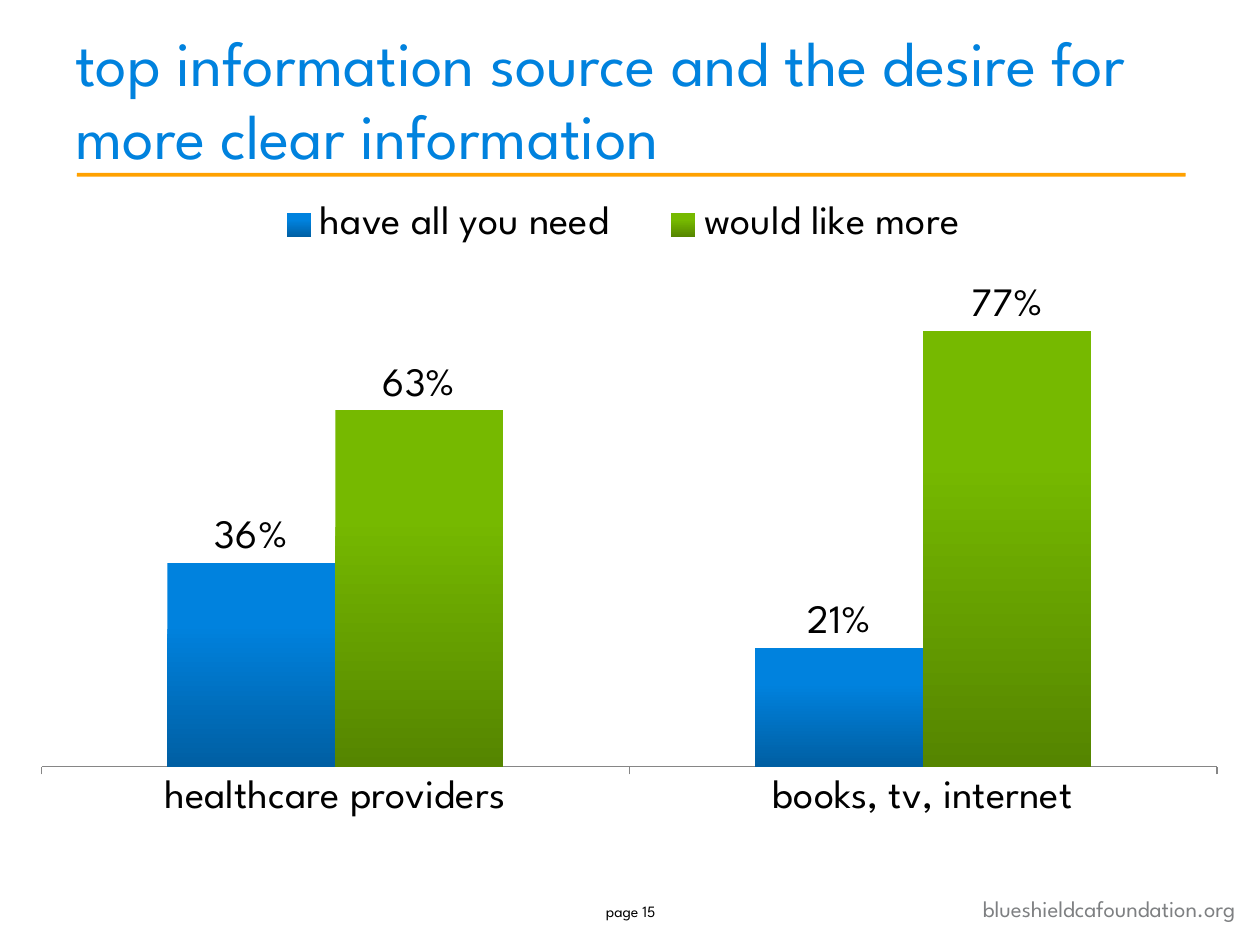
from dataclasses import dataclass

from lxml import etree
from pptx import Presentation
from pptx import util as u
from pptx.chart.data import CategoryChartData
from pptx.dml.color import RGBColor
from pptx.enum import chart as ch, shapes, text
from pptx.oxml import ns


@dataclass(frozen=True)
class Theme:
    face: str = "League Spartan"
    blue: str = "0082DE"
    blue_dark: str = "005FA3"
    green: str = "76B900"
    green_dark: str = "558500"
    orange: str = "FFA100"
    grey: str = "7E8082"
    axis: str = "868686"
    black: str = "000000"
    title_size: int = 36
    title_leading: int = 42
    chart_size: int = 23
    address_size: int = 13
    page_size: int = 9


def colour(code):
    return RGBColor.from_string(code)


def style_font(font, face, size, code):
    font.name, font.size = face, u.Pt(size)
    font.color.rgb = colour(code)


def write(box, words, *, face, size, code, align=text.PP_ALIGN.LEFT,
          anchor=text.MSO_ANCHOR.TOP, leading=None):
    frame = box.text_frame
    frame.word_wrap = True
    frame.vertical_anchor = anchor
    para = frame.paragraphs[0]
    para.alignment = align
    if leading:
        para.line_spacing = u.Pt(leading)
    span = para.add_run()
    span.text = words
    style_font(span.font, face, size, code)


def place(parent, before, inner, **shares):
    """Give a chart part a manual layout, in shares of the chart, after the named child."""
    for old in parent.findall(ns.qn("c:layout")):
        parent.remove(old)
    layout = etree.Element(ns.qn("c:layout"))
    manual = etree.SubElement(layout, ns.qn("c:manualLayout"))
    values = {"layoutTarget": "inner"} if inner else {}
    values |= {"xMode": "edge", "yMode": "edge", **shares}
    for tag, value in values.items():
        etree.SubElement(manual, ns.qn(f"c:{tag}")).set("val", str(value))
    if before is None:
        parent.insert(0, layout)
    else:
        parent.find(ns.qn(before)).addnext(layout)


class SlideBuilder:
    """Holds the theme and the page; lengths are shares of the slide's size."""

    def __init__(self, deck, theme):
        self.deck, self.theme = deck, theme
        self.page = deck.slides.add_slide(deck.slide_layouts[6])

    def area(self, left, top, width, height):
        across, down = self.deck.slide_width, self.deck.slide_height
        return (round(left * across), round(top * down),
                round(width * across), round(height * down))

    def label(self, words, area, **style):
        box = self.page.shapes.add_textbox(*self.area(*area))
        write(box, words, face=self.theme.face, **style)

    def rule(self, area, code):
        bar = self.page.shapes.add_shape(
            shapes.MSO_SHAPE.ROUNDED_RECTANGLE, *self.area(*area))
        bar.shadow.inherit = False
        bar.fill.solid()
        bar.fill.fore_color.rgb = colour(code)
        bar.line.fill.background()

    def columns(self, area, categories, series):
        """Add a column chart; series maps a name to its values and two gradient colours."""
        theme = self.theme
        data = CategoryChartData(number_format="0%")
        data.categories = categories
        for name, (values, _) in series.items():
            data.add_series(name, values)
        chart = self.page.shapes.add_chart(
            ch.XL_CHART_TYPE.COLUMN_CLUSTERED, *self.area(*area), data).chart
        chart.has_title = False
        style_font(chart.font, theme.face, theme.chart_size, theme.black)

        chart.has_legend = True
        chart.legend.position = ch.XL_LEGEND_POSITION.TOP
        chart.legend.include_in_layout = False
        style_font(chart.legend.font, theme.face, theme.chart_size, theme.black)

        heights = chart.value_axis
        heights.minimum_scale, heights.maximum_scale = 0, 0.8
        heights.has_major_gridlines = False
        heights.visible = False
        base = chart.category_axis
        base.major_tick_mark = ch.XL_TICK_MARK.OUTSIDE
        base.format.line.color.rgb = colour(theme.axis)
        base.format.line.width = u.Pt(0.75)
        style_font(base.tick_labels.font, theme.face, theme.chart_size, theme.black)

        plot = chart.plots[0]
        plot.gap_width, plot.overlap = 150, 0
        plot.vary_by_categories = False
        for bars, (_, shades) in zip(plot.series, series.values()):
            fill = bars.format.fill
            fill.gradient()
            fill.gradient_angle = 270
            for stop, shade, position in zip(fill.gradient_stops, shades, (0.3, 1)):
                stop.color.rgb, stop.position = colour(shade), position
            labels = bars.data_labels
            labels.show_value = True
            labels.number_format, labels.number_format_is_linked = "0%", False
            labels.position = ch.XL_LABEL_POSITION.OUTSIDE_END
            style_font(labels.font, theme.face, theme.chart_size, theme.black)
        return chart


def main():
    deck = Presentation()
    deck.slide_width, deck.slide_height = u.Inches(10), u.Inches(7.5)
    theme = Theme()
    builder = SlideBuilder(deck, theme)

    builder.label("blueshieldcafoundation.org", (0.72, 0.94, 0.27, 0.04),
                  size=theme.address_size, code=theme.grey,
                  align=text.PP_ALIGN.RIGHT)
    builder.rule((0.061, 0.183, 0.88, 0.004), theme.orange)
    builder.label("top information source and the desire for more clear information",
                  (0.05, 0.033, 0.9, 0.156), size=theme.title_size, code=theme.blue,
                  anchor=text.MSO_ANCHOR.BOTTOM, leading=theme.title_leading)
    builder.label("page 15", (0.456, 0.93, 0.089, 0.069), size=theme.page_size,
                  code=theme.black, align=text.PP_ALIGN.CENTER,
                  anchor=text.MSO_ANCHOR.MIDDLE)

    chart = builder.columns(
        (0, 0.178, 1, 0.8),
        ["healthcare providers", "books, tv, internet"],
        {"have all you need": ((0.36, 0.21), (theme.blue, theme.blue_dark)),
         "would like more": ((0.63, 0.77), (theme.green, theme.green_dark))})
    plot_area = chart.plots[0]._element.getparent()
    place(plot_area, None, True, x=0.033, y=0.193, w=0.933, h=0.599)
    place(chart.legend._element, "c:legendPos", False, x=0.19, y=0.03, w=0.61, h=0.09)

    deck.save("out.pptx")


if __name__ == "__main__":
    main()
